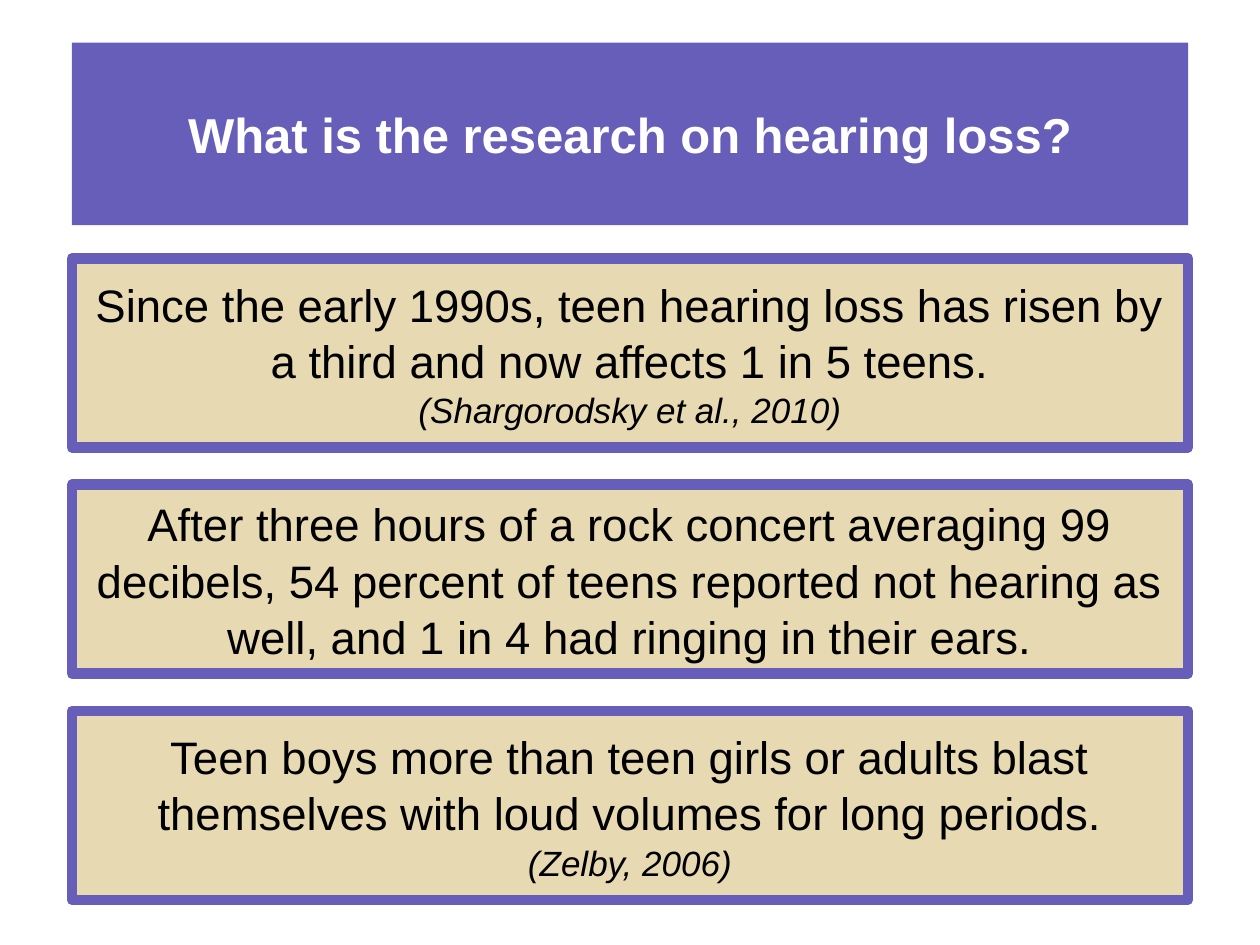
from pptx import Presentation
from pptx.dml.color import RGBColor
from pptx.enum import shapes, text
from pptx.util import Cm, Pt

PURPLE = RGBColor(0x66, 0x5E, 0xB8)
SAND = RGBColor(0xE7, 0xD9, 0xB1)
WHITE = RGBColor(0xFF, 0xFF, 0xFF)
BLACK = RGBColor(0, 0, 0)

LEFT, WIDTH = Cm(1.45), Cm(22.5)
FIRST_TOP, PITCH, BOX_HEIGHT = 5.21, 4.56, Cm(3.81)

FINDINGS = [
    [("Since the early 1990s, teen hearing loss has risen by a third "
      "and now affects 1 in 5 teens.", {}),
     ("(Shargorodsky et al., 2010)", {"size": 20, "italic": True})],
    [("After three hours of a rock concert averaging 99", {}),
     ("decibels, 54 percent of teens reported not hearing as well, "
      "and 1 in 4 had ringing in their ears.", {})],
    [("Teen boys more than teen girls or adults blast themselves "
      "with loud volumes for long periods.", {}),
     ("(Zelby, 2006)", {"size": 20, "italic": True})],
]


def write(para, words, size=26, color=BLACK, bold=False, italic=False, spacing=1.03):
    para.alignment = text.PP_ALIGN.CENTER
    para.line_spacing = spacing
    span = para.add_run()
    span.text = words
    span.font.name = "Arial"
    span.font.size = Pt(size)
    span.font.color.rgb = color
    span.font.bold = bold
    span.font.italic = italic


deck = Presentation()
deck.slide_width, deck.slide_height = Cm(25.4), Cm(19.05)
page = deck.slides.add_slide(deck.slide_layouts[5])

title = page.shapes.title
title.left, title.top, title.width, title.height = LEFT, Cm(0.86), WIDTH, Cm(3.68)
title.fill.solid()
title.fill.fore_color.rgb = PURPLE
title.text_frame.vertical_anchor = text.MSO_ANCHOR.MIDDLE
write(title.text_frame.paragraphs[0], "What is the research on hearing loss?",
      size=28, color=WHITE, bold=True, spacing=1.0)

for row, finding in enumerate(FINDINGS):
    box = page.shapes.add_shape(shapes.MSO_SHAPE.RECTANGLE, LEFT,
                                Cm(FIRST_TOP + row * PITCH), WIDTH, BOX_HEIGHT)
    box.name = f"Finding {row + 1}"
    box.shadow.inherit = False
    box.fill.solid()
    box.fill.fore_color.rgb = SAND
    box.line.color.rgb = PURPLE
    box.line.width = Pt(6)
    frame = box.text_frame
    frame.word_wrap = True
    frame.vertical_anchor = text.MSO_ANCHOR.MIDDLE
    for number, (words, style) in enumerate(finding):
        para = frame.add_paragraph() if number else frame.paragraphs[0]
        write(para, words, **style)

deck.save("out.pptx")
